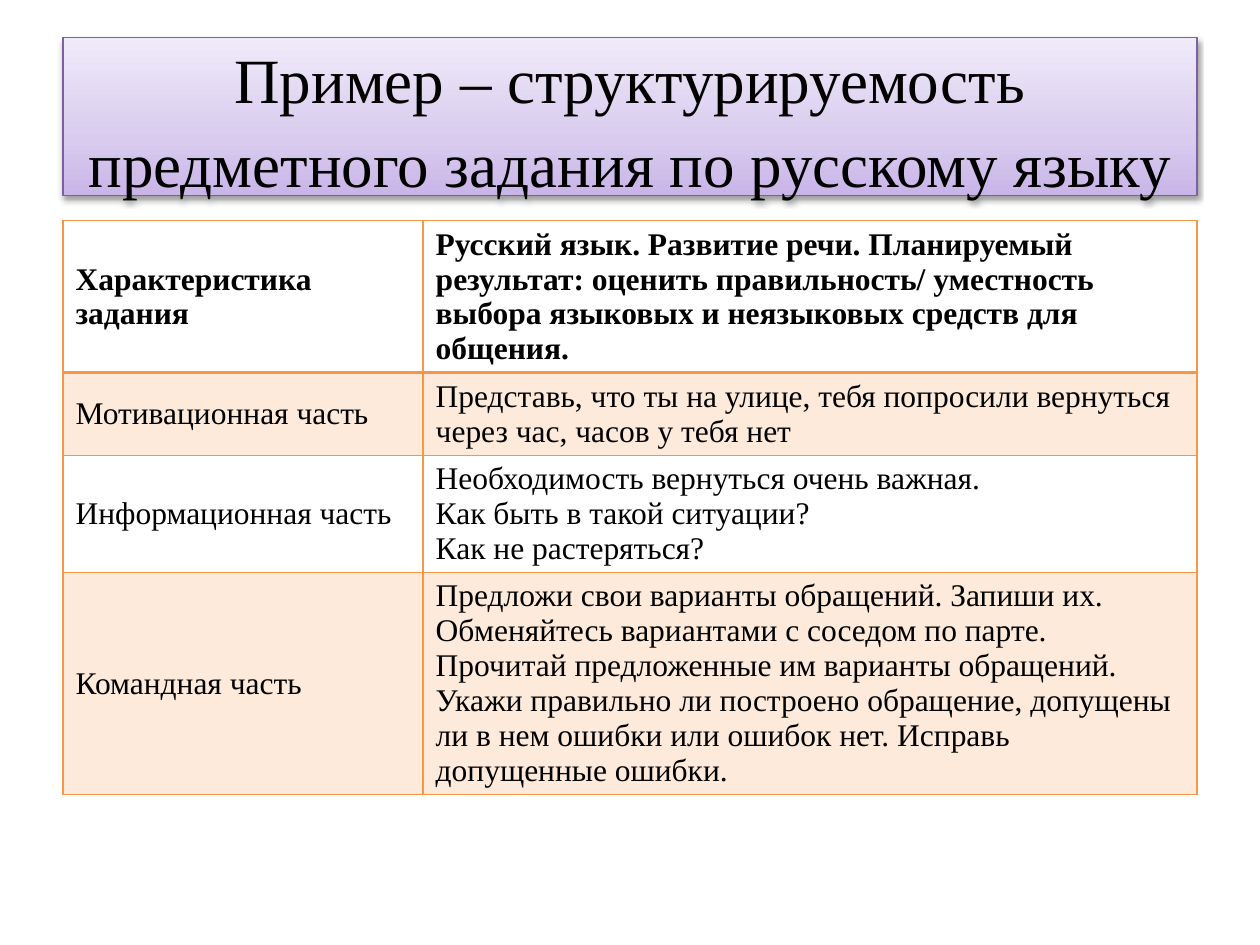
from lxml.etree import SubElement
from pptx import Presentation
from pptx.dml.color import RGBColor
from pptx.enum.text import MSO_ANCHOR, MSO_AUTO_SIZE, PP_ALIGN
from pptx.oxml import parse_xml
from pptx.oxml.ns import nsdecls, qn
from pptx.util import Cm, Pt

COLORS = {
    "text": "000000",
    "title_line": "7D60A0",
    "title_bottom": "C9B5E8",
    "title_middle": "D8CBEE",
    "title_top": "F0EAF9",
    "accent": "F79646",
}
FONT = "Times New Roman"


def write_text(text_frame, text, size=18, bold=False, align=PP_ALIGN.LEFT, spacing=None):
    """Write text, one paragraph per line, in the given format."""
    text_frame.text = text
    for paragraph in text_frame.paragraphs:
        paragraph.alignment = align
        paragraph.line_spacing = spacing
        font = paragraph.runs[0].font
        font.name, font.size, font.bold = FONT, Pt(size), bold
        font.color.rgb = RGBColor.from_string(COLORS["text"])


presentation = Presentation()
presentation.slide_width, presentation.slide_height = Cm(25.4), Cm(19.05)
slide = presentation.slides.add_slide(presentation.slide_layouts[5])

# Title with gradient, outline and shadow
title = slide.shapes.title
title.left, title.top, title.width, title.height = Cm(1.27), Cm(0.76), Cm(22.86), Cm(3.18)
title.text_frame.auto_size = MSO_AUTO_SIZE.NONE
title.text_frame.vertical_anchor = MSO_ANCHOR.MIDDLE
write_text(title.text_frame,
           "Пример – структурируемость предметного задания по русскому языку",
           size=36, align=PP_ALIGN.CENTER, spacing=1.1)
title_stops = [(0, "title_bottom"), (35, "title_middle"), (100, "title_top")]
stops = "".join(f'<a:gs pos="{position * 1000}"><a:srgbClr val="{COLORS[name]}"/></a:gs>'
                for position, name in title_stops)
properties = title._element.spPr
properties.append(parse_xml(
    f'<a:gradFill {nsdecls("a")} rotWithShape="1"><a:gsLst>{stops}</a:gsLst>'
    '<a:lin ang="16200000" scaled="0"/></a:gradFill>'))
title.line.color.rgb = RGBColor.from_string(COLORS["title_line"])
title.line.width = Pt(0.75)
properties.append(parse_xml(
    f'<a:effectLst {nsdecls("a")}><a:outerShdw blurRad="{Pt(3.1)}" dist="{Pt(1.6)}" '
    'dir="5400000" rotWithShape="0"><a:srgbClr val="000000"><a:alpha val="38000"/>'
    '</a:srgbClr></a:outerShdw></a:effectLst>'))

# Table: task part and its wording
rows = [
    ("Характеристика задания",
     "Русский язык. Развитие речи. Планируемый результат: оценить правильность/ "
     "уместность выбора языковых и неязыковых средств для общения."),
    ("Мотивационная часть",
     "Представь, что ты на улице, тебя попросили вернуться через час, часов у тебя нет"),
    ("Информационная часть",
     "Необходимость вернуться очень важная.\n"
     "Как быть в такой ситуации?\n"
     "Как не растеряться?"),
    ("Командная часть",
     "Предложи свои варианты обращений. Запиши их.\n"
     "Обменяйтесь вариантами с соседом по парте. "
     "Прочитай предложенные им варианты обращений.\n"
     "Укажи правильно ли построено обращение, допущены ли в нем ошибки или ошибок нет. "
     "Исправь допущенные ошибки."),
]
row_heights = [3.05, 1.66, 2.36, 4.46]
column_widths = [7.26, 15.6]
table = slide.shapes.add_table(len(rows), 2, Cm(1.27), Cm(4.45),
                               Cm(sum(column_widths)), Cm(sum(row_heights))).table
table.first_row = table.horz_banding = False
for column, width in zip(table.columns, column_widths):
    column.width = Cm(width)

for row_index, texts in enumerate(rows):
    table.rows[row_index].height = Cm(row_heights[row_index])
    for column_index, text in enumerate(texts):
        cell = table.cell(row_index, column_index)
        write_text(cell.text_frame, text, bold=row_index == 0)
        cell.vertical_anchor = MSO_ANCHOR.MIDDLE if column_index == 0 else MSO_ANCHOR.TOP

        # Borders, with a heavier rule under the header
        cell_properties = cell._tc.get_or_add_tcPr()
        for side in ("L", "R", "T", "B"):
            heavy = (row_index, side) in [(0, "B"), (1, "T")]
            border = SubElement(cell_properties, qn(f"a:ln{side}"), w=str(Pt(2 if heavy else 1)))
            border_fill = SubElement(border, qn("a:solidFill"))
            SubElement(border_fill, qn("a:srgbClr"), val=COLORS["accent"])

        # Every second row is tinted
        if row_index % 2:
            cell.fill.solid()
            cell.fill.fore_color.rgb = RGBColor.from_string(COLORS["accent"])
            tint = cell_properties.find(qn("a:solidFill")).find(qn("a:srgbClr"))
            SubElement(tint, qn("a:alpha"), val="20000")
        else:
            cell.fill.background()

presentation.save("out.pptx")
